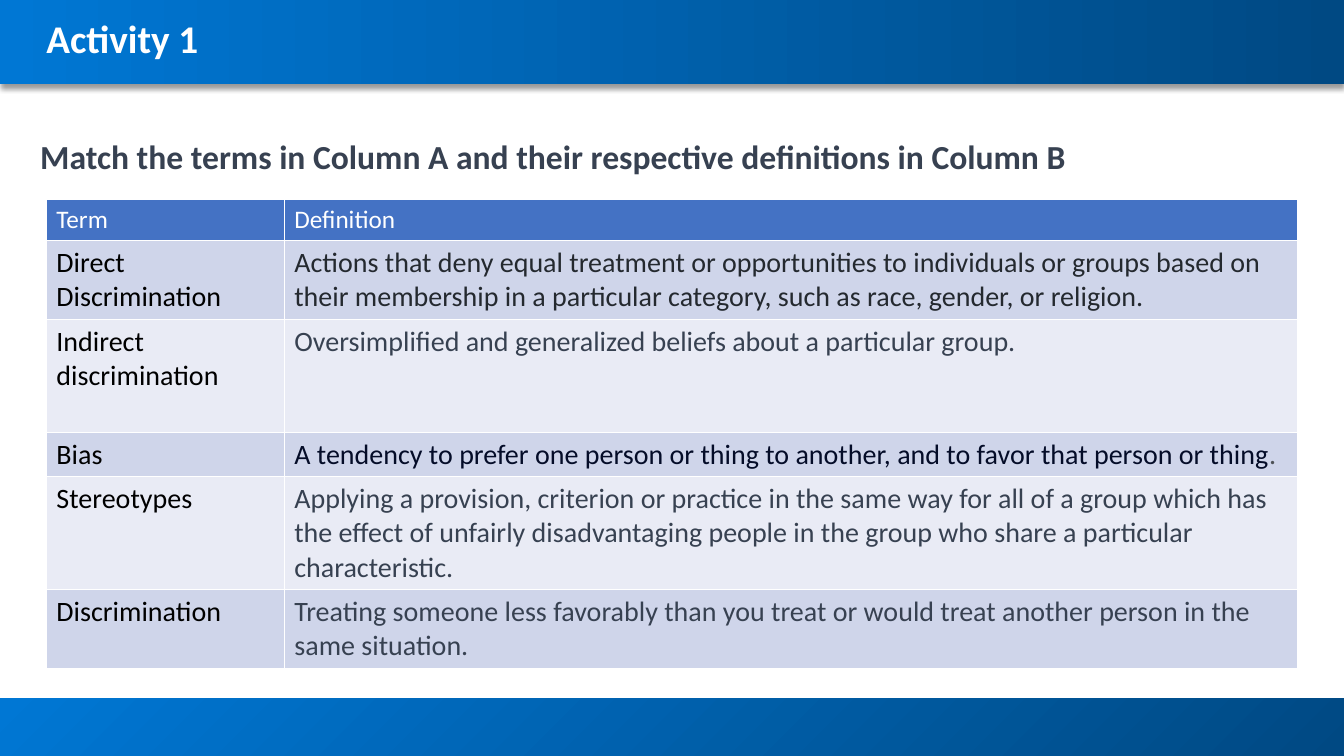
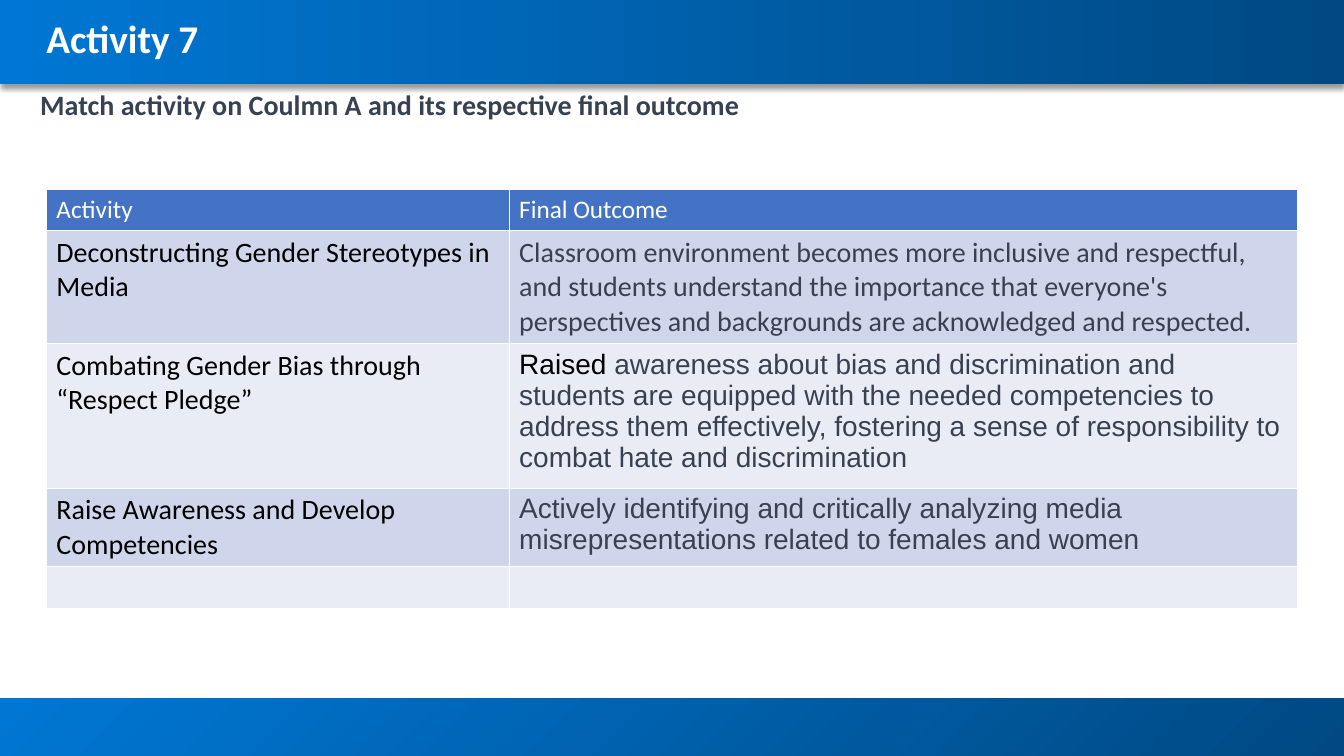
from lxml.etree import SubElement
from pptx import Presentation
from pptx.dml.color import RGBColor
from pptx.enum.shapes import MSO_SHAPE
from pptx.enum.text import MSO_ANCHOR
from pptx.oxml import parse_xml
from pptx.oxml.ns import nsdecls, qn
from pptx.util import Inches, Pt

WIDTH, HEIGHT = 13.33, 7.5
MARGIN, CONTENT_W = 0.46, 12.41
BLUE, NAVY = "0077D4", "004983"
WHITE, BLACK, SLATE = "FFFFFF", "000000", "374151"
HEADER_FILL = "4472C4"
BAND_FILLS = ["CFD5EA", "E9EBF5"]

TITLE = {"name": "Calibri", "size": Pt(28), "bold": True, "color": WHITE}
PROMPT = {"name": "Calibri", "bold": True, "color": SLATE}
HEADER = {"name": "Calibri", "size": Pt(18), "bold": False, "color": WHITE}
TERM = {"name": "Calibri", "size": Pt(20), "bold": False, "color": BLACK}
ANSWER = {**TERM, "color": SLATE}
ARIAL = {**ANSWER, "name": "Arial"}


def rgb(value):
    return RGBColor.from_string(value)


def add_run(p, text, style):
    r = p.add_run()
    r.text = text
    for key, value in style.items():
        if key == "color":
            r.font.color.rgb = rgb(value)
        else:
            setattr(r.font, key, value)


def add_text(s, box, text, style, line_spacing, frame):
    tf = s.shapes.add_textbox(*map(Inches, box)).text_frame
    for key, value in {"word_wrap": True, **frame}.items():
        setattr(tf, key, value)
    p = tf.paragraphs[0]
    p.line_spacing = line_spacing
    add_run(p, text, style)


def add_band(s, top, height, colors, angle):
    sp = s.shapes.add_shape(MSO_SHAPE.RECTANGLE, 0, Inches(top), Inches(WIDTH), Inches(height))
    sp.shadow.inherit = False
    sp.line.fill.background()
    sp.fill.gradient()
    sp.fill.gradient_angle = angle
    for stop, color in zip(sp.fill.gradient_stops, colors):
        stop.color.rgb = rgb(color)
    return sp


def add_drop_shadow(sp):
    effects = sp._element.spPr.find(qn("a:effectLst"))
    shadow = SubElement(effects, qn("a:outerShdw"), blurRad=str(Pt(4)), dist=str(Pt(3)),
                        dir="5400000", algn="t", rotWithShape="0")
    color = SubElement(shadow, qn("a:srgbClr"), val=BLACK)
    SubElement(color, qn("a:alpha"), val="40000")


def add_frame(s, title):
    add_band(s, 6.93, 0.57, (NAVY, BLUE), 135)
    add_drop_shadow(add_band(s, 0, 0.83, (BLUE, NAVY), 0))
    margins = {f"margin_{side}": 0 for side in ("left", "top", "right", "bottom")}
    add_text(s, (MARGIN, 0.17, CONTENT_W, 0.5), title, TITLE, Pt(27.8),
             {"vertical_anchor": MSO_ANCHOR.MIDDLE, **margins})


def set_borders(cell):
    tc_pr = cell._tc.get_or_add_tcPr()
    for i, side in enumerate("LRTB"):
        tc_pr.insert(i, parse_xml(
            f'<a:ln{side} {nsdecls("a")} w="{Pt(1)}"><a:solidFill>'
            f'<a:srgbClr val="{WHITE}"/></a:solidFill></a:ln{side}>'))


def fill_cell(cell, runs, fill):
    cell.fill.solid()
    cell.fill.fore_color.rgb = rgb(fill)
    set_borders(cell)
    for text, style in runs:
        add_run(cell.text_frame.paragraphs[0], text, style)


def add_match_table(s, top, first_col, heights, headings, pairs):
    rows = [[[(text, HEADER)] for text in headings]]
    rows += [[[(term, TERM)] if term else [], answer] for term, answer in pairs]
    table = s.shapes.add_table(len(rows), 2, Inches(MARGIN), Inches(top),
                               Inches(CONTENT_W), Inches(sum(heights))).table
    table.horz_banding = False
    for col, width in zip(table.columns, (first_col, CONTENT_W - first_col)):
        col.width = Inches(width)
    for i, (row, height) in enumerate(zip(rows, heights)):
        table.rows[i].height = Inches(height)
        fill = BAND_FILLS[(i - 1) % 2] if i else HEADER_FILL
        for j, runs in enumerate(row):
            fill_cell(table.cell(i, j), runs, fill)


def add_activity(prs, title, prompt, prompt_top, prompt_size, **table):
    s = prs.slides.add_slide(prs.slide_layouts[6])
    add_frame(s, title)
    add_text(s, (0.3, prompt_top, CONTENT_W, 0.5), prompt,
             {**PROMPT, "size": Pt(prompt_size)}, 0.9, {})
    add_match_table(s, **table)


def main():
    prs = Presentation()
    prs.slide_width, prs.slide_height = Inches(WIDTH), Inches(HEIGHT)
    add_activity(
        prs, "Activity 1",
        "Match the terms in Column A and their respective definitions in Column B", 1.34, 24,
        top=1.98, first_col=2.36, heights=[0.41, 0.78, 1.12, 0.44, 1.12, 0.78],
        headings=("Term", "Definition"),
        pairs=[
            ("Direct Discrimination", [(
                "Actions that deny equal treatment or opportunities to individuals or groups "
                "based on their membership in a particular category, such as race, gender, "
                "or religion.", {**ANSWER, "color": "24292F"})]),
            ("Indirect discrimination", [(
                "Oversimplified and generalized beliefs about a particular group.", ANSWER)]),
            ("Bias", [
                ("A tendency to prefer one person or thing to another, and to favor that "
                 "person or thing", {**ANSWER, "color": "040C28"}),
                (".", {**ANSWER, "color": "4D5156"})]),
            ("Stereotypes", [(
                "Applying a provision, criterion or practice in the same way for all of a group "
                "which has the effect of unfairly disadvantaging people in the group who share "
                "a particular characteristic.", ANSWER)]),
            ("Discrimination", [(
                "Treating someone less favorably than you treat or would treat another person "
                "in the same situation.", ANSWER)]),
        ])
    add_activity(
        prs, "Activity 7",
        "Match activity on Coulmn A and its respective final outcome", 0.86, 20,
        top=1.88, first_col=4.59, heights=[0.41, 1.12, 1.34, 0.78, 0.41],
        headings=("Activity", "Final Outcome"),
        pairs=[
            ("Deconstructing Gender Stereotypes in Media", [(
                "Classroom environment becomes more inclusive and respectful, and students "
                "understand the importance that everyone's perspectives and backgrounds are "
                "acknowledged and respected.", ANSWER)]),
            ("Combating Gender Bias through “Respect Pledge”", [
                ("Raised ", {**ARIAL, "color": BLACK}),
                ("awareness about bias and discrimination and students are equipped with the "
                 "needed competencies to address them effectively, fostering a sense of "
                 "responsibility to combat hate and discrimination", ARIAL)]),
            ("Raise Awareness and Develop Competencies", [(
                "Actively identifying and critically analyzing media misrepresentations related "
                "to females and women", ARIAL)]),
            ("", []),
        ])
    prs.save("out.pptx")


if __name__ == "__main__":
    main()
